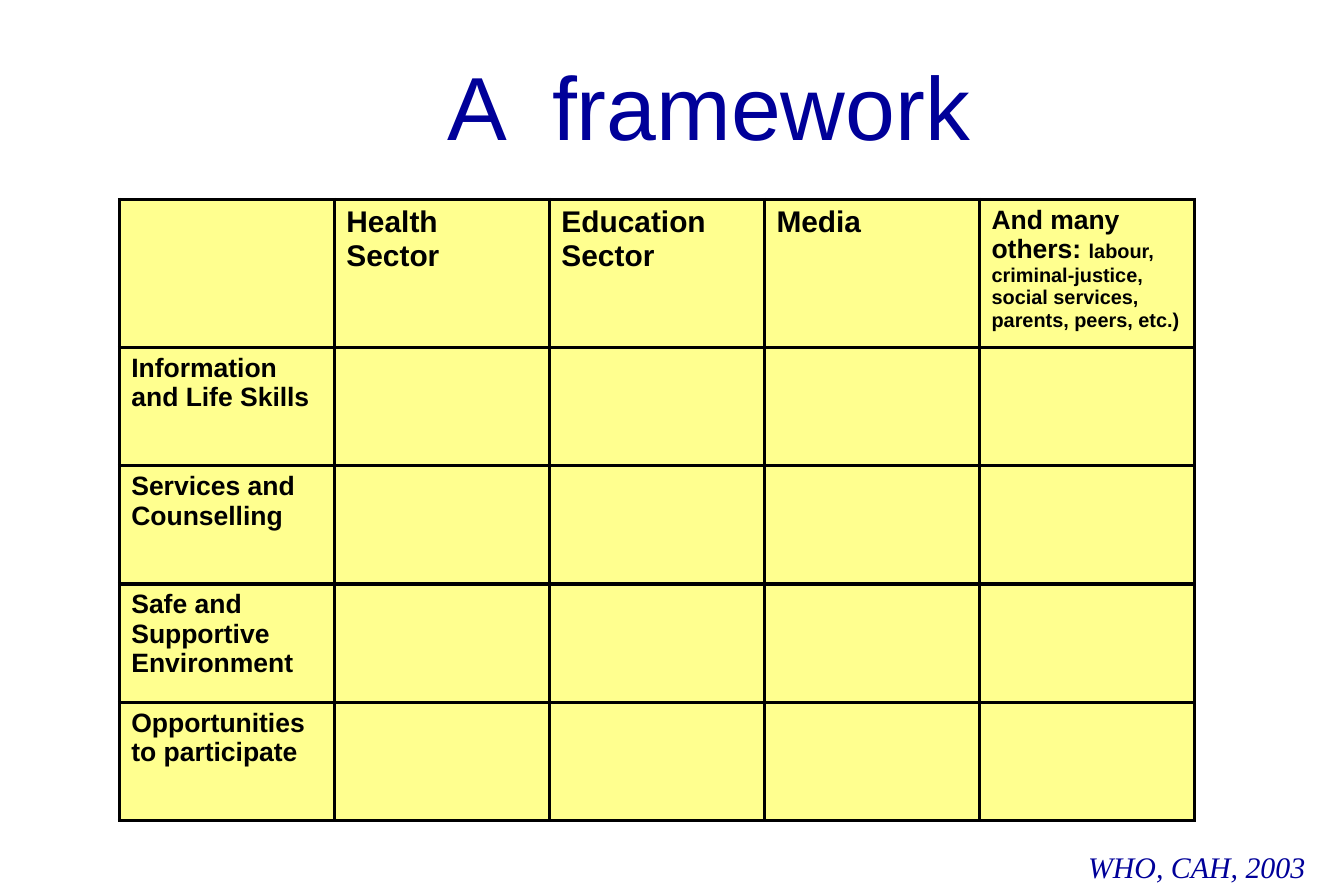
from dataclasses import dataclass

from lxml.etree import SubElement
from pptx import Presentation
from pptx.dml.color import RGBColor
from pptx.enum.text import MSO_ANCHOR, PP_ALIGN
from pptx.oxml.ns import qn
from pptx.util import Inches, Pt


@dataclass(frozen=True)
class Theme:
    """Colours, fonts, type sizes and the grid module of the slide."""
    navy: str = "000099"
    black: str = "000000"
    yellow: str = "FFFF8F"
    sans: str = "Arial"
    serif: str = "Times New Roman"
    title_size: float = 54
    heading_size: float = 18
    label_size: float = 16
    detail_size: float = 12
    border: float = 2.25
    module: float = 0.25


THEME = Theme()
SECTORS = ["Health Sector", "Education Sector", "Media"]
OTHERS = "And many others: "
OTHERS_DETAIL = "labour, criminal-justice, social services, parents, peers, etc.)"
APPROACHES = [
    "Information and Life Skills",
    "Services and Counselling",
    "Safe and Supportive Environment",
    "Opportunities to participate",
]
COLUMN_WIDTH = 7.2
HEADER_HEIGHT = 4.96
ROW_HEIGHT = 3.96


def grid(modules):
    """Convert a number of grid modules to a length."""
    return Inches(modules * THEME.module)


def format_run(run, size, font=THEME.sans, color=THEME.black, bold=False, italic=False):
    """Set the type of one run."""
    run.font.size = Pt(size)
    run.font.name = font
    run.font.color.rgb = RGBColor.from_string(color)
    run.font.bold = bold
    run.font.italic = italic


def add_text(slide, text, box, size, font, wrap=True, italic=False, align=PP_ALIGN.LEFT):
    """Add a navy line of text in a box given in grid modules."""
    frame = slide.shapes.add_textbox(*map(grid, box)).text_frame
    frame.word_wrap = wrap
    frame.vertical_anchor = MSO_ANCHOR.MIDDLE
    frame.text = text
    paragraph = frame.paragraphs[0]
    paragraph.alignment = align
    format_run(paragraph.runs[0], size, font, THEME.navy, italic=italic)


def style_cell(cell):
    """Give a cell a yellow fill and a black border on all sides."""
    properties = cell._tc.get_or_add_tcPr()
    for side in ("a:lnL", "a:lnR", "a:lnT", "a:lnB"):
        line = SubElement(properties, qn(side), w=str(Pt(THEME.border)))
        fill = SubElement(line, qn("a:solidFill"))
        SubElement(fill, qn("a:srgbClr"), val=THEME.black)
    cell.fill.solid()
    cell.fill.fore_color.rgb = RGBColor.from_string(THEME.yellow)


def write_cell(cell, *parts):
    """Write bold parts, each a text and its size, into a cell."""
    paragraph = cell.text_frame.paragraphs[0]
    for text, size in parts:
        run = paragraph.add_run()
        run.text = text
        format_run(run, size, bold=True)


def add_framework(slide, left, top):
    """Add the table of approaches by sector."""
    row_count, column_count = len(APPROACHES) + 1, len(SECTORS) + 2
    height = HEADER_HEIGHT + len(APPROACHES) * ROW_HEIGHT
    box = (left, top, column_count * COLUMN_WIDTH, height)
    table = slide.shapes.add_table(row_count, column_count, *map(grid, box)).table
    for column in table.columns:
        column.width = grid(COLUMN_WIDTH)
    for index, row in enumerate(table.rows):
        row.height = grid(ROW_HEIGHT if index else HEADER_HEIGHT)
    for cell in table.iter_cells():
        style_cell(cell)
    for index, sector in enumerate(SECTORS, 1):
        write_cell(table.cell(0, index), (sector, THEME.heading_size))
    write_cell(
        table.cell(0, column_count - 1),
        (OTHERS, THEME.label_size),
        (OTHERS_DETAIL, THEME.detail_size),
    )
    for index, approach in enumerate(APPROACHES, 1):
        write_cell(table.cell(index, 0), (approach, THEME.label_size))


def main():
    """Build and save the framework slide."""
    presentation = Presentation()
    presentation.slide_width, presentation.slide_height = grid(45), grid(30)
    slide = presentation.slides.add_slide(presentation.slide_layouts[6])
    add_text(slide, "WHO, CAH, 2003", (36.04, 28.2, 8.16, 1.6),
             THEME.heading_size, THEME.serif, wrap=False, italic=True)
    add_framework(slide, 4, 6.68)
    add_text(slide, "A  framework", (5.68, 1, 36.12, 5),
             THEME.title_size, THEME.sans, align=PP_ALIGN.CENTER)
    presentation.save("out.pptx")


if __name__ == "__main__":
    main()
